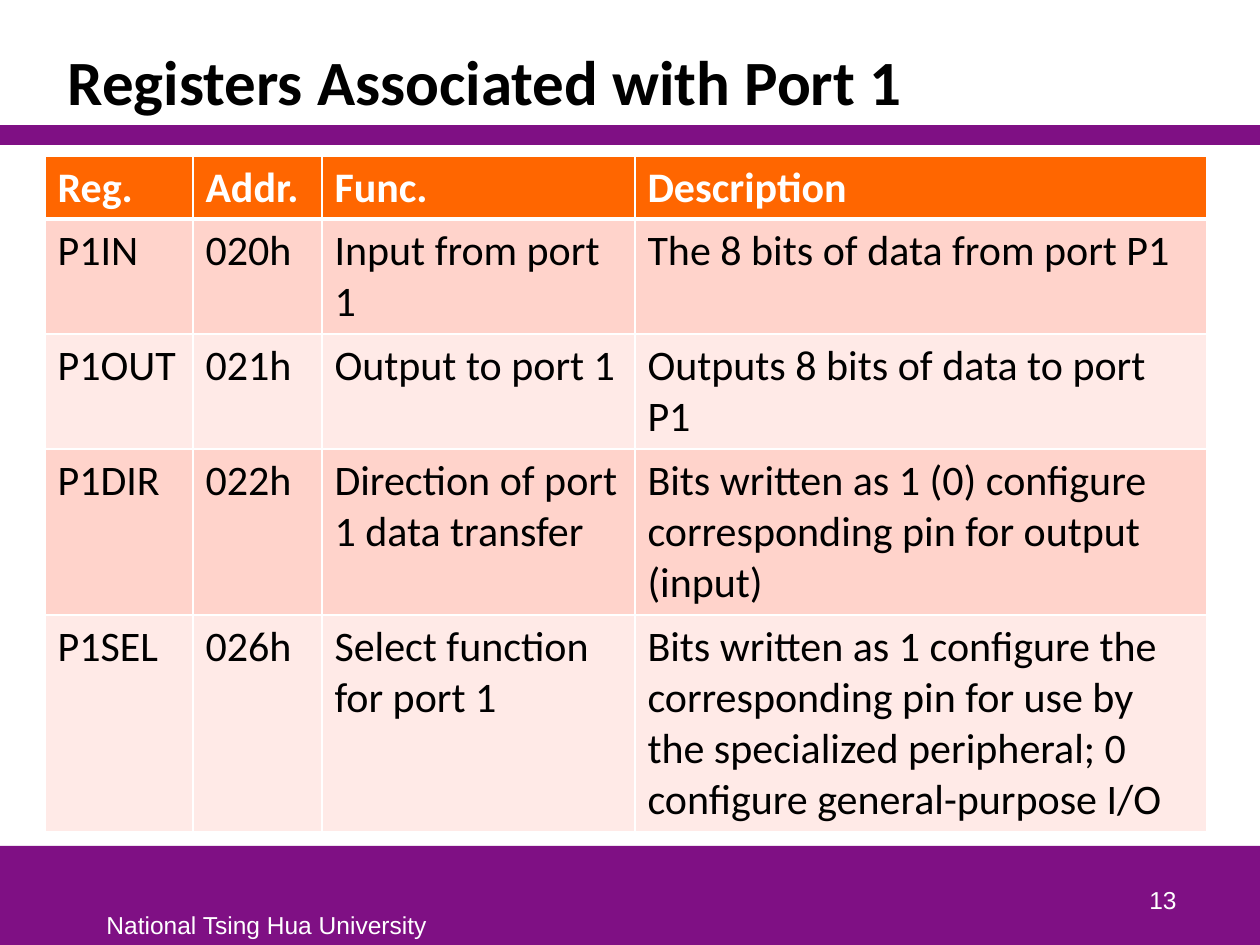
import pptx
import pptx.util
import pptx.dml.color
import pptx.enum.shapes
import pptx.enum.text
import pptx.oxml

RGBColor = pptx.dml.color.RGBColor
PURPLE = RGBColor(0x7F, 0x10, 0x84)
ORANGE = RGBColor(0xFF, 0x66, 0x00)
ROSE = RGBColor(0xFF, 0xD3, 0xCB)
BLUSH = RGBColor(0xFF, 0xEA, 0xE7)
WHITE = RGBColor(0xFF, 0xFF, 0xFF)
BLACK = RGBColor(0x00, 0x00, 0x00)

ANCHOR = pptx.enum.text.MSO_ANCHOR
ALIGN = pptx.enum.text.PP_ALIGN
NS = "http://schemas.openxmlformats.org/drawingml/2006/main"

REGISTERS = [
    ("Reg.", "Addr.", "Func.", "Description"),
    ("P1IN", "020h", "Input from port 1", "The 8 bits of data from port P1"),
    ("P1OUT", "021h", "Output to port 1", "Outputs 8 bits of data to port P1"),
    ("P1DIR", "022h", "Direction of port 1 data transfer",
     "Bits written as 1 (0) configure corresponding pin for output (input)"),
    ("P1SEL", "026h", "Select function for port 1",
     "Bits written as 1 configure the corresponding pin for use by the "
     "specialized peripheral; 0 configure general-purpose I/O"),
]


def px(n):
    return pptx.util.Emu(round(n * 914400 / 126))


def write(tf, text, font="Calibri", size=24, color=BLACK, bold=False,
          align=ALIGN.LEFT, spacing=None):
    p = tf.paragraphs[0]
    p.alignment = align
    if spacing:
        p.line_spacing = spacing
    r = p.add_run()
    r.text = text
    r.font.name = font
    r.font.size = pptx.util.Pt(size)
    r.font.bold = bold
    r.font.color.rgb = color


def set_borders(cell, **widths):
    tcPr = cell._tc.get_or_add_tcPr()
    for side in "LRTB":
        width = pptx.util.Pt(widths.get(side, 1))
        tcPr.append(pptx.oxml.parse_xml(
            f'<a:ln{side} xmlns:a="{NS}" w="{width}"><a:solidFill>'
            f'<a:srgbClr val="{WHITE}"/></a:solidFill></a:ln{side}>'))


class Deck:
    def __init__(self, prs):
        self.s = prs.slides.add_slide(prs.slide_layouts[5])
        self.small = dict(font="Arial", size=14, color=WHITE)

    def bar(self, y, h):
        sp = self.s.shapes.add_shape(
            pptx.enum.shapes.MSO_SHAPE.RECTANGLE, px(0), px(y), px(1260), px(h))
        sp.shadow.inherit = False
        sp.fill.solid()
        sp.fill.fore_color.rgb = PURPLE
        sp.line.fill.background()

    def title(self, text, x, y, w, h):
        sp = self.s.shapes.title
        sp.left, sp.top, sp.width, sp.height = px(x), px(y), px(w), px(h)
        tf = sp.text_frame
        tf.vertical_anchor = ANCHOR.BOTTOM
        tf.auto_size = pptx.enum.text.MSO_AUTO_SIZE.NONE
        write(tf, text, size=36, bold=True, spacing=0.85)

    def label(self, text, x, y, w, h, wrap=True, anchor=ANCHOR.TOP,
              align=ALIGN.LEFT):
        sp = self.s.shapes.add_textbox(px(x), px(y), px(w), px(h))
        tf = sp.text_frame
        tf.word_wrap = wrap
        tf.vertical_anchor = anchor
        write(tf, text, align=align, **self.small)

    def table(self, rows, x, y, widths, heights):
        tbl = self.s.shapes.add_table(
            len(rows), len(widths), px(x), px(y),
            px(sum(widths)), px(sum(heights))).table
        for col, w in zip(tbl.columns, widths):
            col.width = px(w)
        for i, (row, h) in enumerate(zip(rows, heights)):
            tbl.rows[i].height = px(h)
            head = i == 0
            fill = ORANGE if head else ROSE if i % 2 else BLUSH
            for j, text in enumerate(row):
                cell = tbl.cell(i, j)
                set_borders(cell, T=3 if i == 1 else 1, B=3 if head else 1)
                cell.fill.solid()
                cell.fill.fore_color.rgb = fill
                write(cell.text_frame, text, bold=head,
                      color=WHITE if head else BLACK)


def main():
    prs = pptx.Presentation()
    prs.slide_width, prs.slide_height = px(1260), px(945)
    deck = Deck(prs)
    deck.bar(846, 99)
    deck.bar(125, 20)
    deck.label("National Tsing Hua University", 94, 904, 348, 41, wrap=False)
    deck.label("13", 927, 858, 262, 63, anchor=ANCHOR.BOTTOM, align=ALIGN.RIGHT)
    deck.title("Registers Associated with Port 1", 55, 32, 1130, 93)
    deck.table(REGISTERS, 45, 156, [148, 129, 313, 572],
               [63, 115, 115, 166, 217])
    prs.save("out.pptx")


if __name__ == "__main__":
    main()
